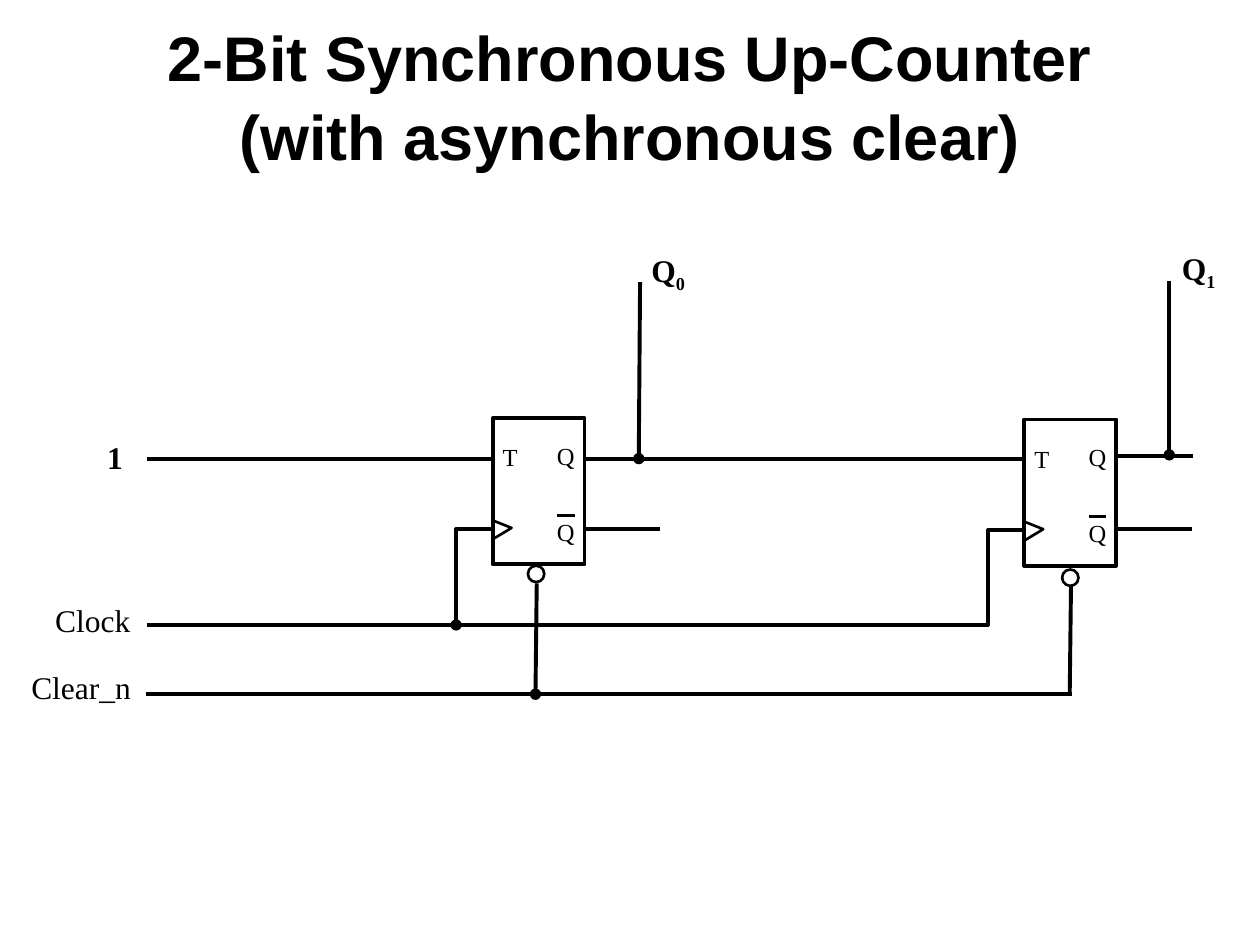
"""Draw a two-bit synchronous up-counter built from T flip-flops."""
from dataclasses import dataclass

from lxml import etree
from pptx import Presentation
from pptx.dml.color import RGBColor
from pptx.enum.shapes import MSO_CONNECTOR, MSO_SHAPE
from pptx.enum.text import MSO_ANCHOR, MSO_AUTO_SIZE, PP_ALIGN
from pptx.oxml.ns import qn
from pptx.shapes.autoshape import Shape
from pptx.shapes.shapetree import SlideShapes
from pptx.util import Inches, Pt

STRAIGHT = MSO_CONNECTOR.STRAIGHT
RECTANGLE, OVAL = MSO_SHAPE.RECTANGLE, MSO_SHAPE.OVAL
CENTER, TOP = PP_ALIGN.CENTER, MSO_ANCHOR.TOP
GROW = MSO_AUTO_SIZE.SHAPE_TO_FIT_TEXT
Point = tuple[float, float]


@dataclass(frozen=True)
class Theme:
    ink: RGBColor = RGBColor(0, 0, 0)
    paper: RGBColor = RGBColor(255, 255, 255)
    title_font: str = "Arial"
    label_font: str = "Times New Roman"
    title_size: float = 36
    signal_size: float = 18
    pin_size: float = 14
    wire: float = 2.25
    symbol: float = 1.5
    overbar: float = 1.38
    dot: float = 0.75


@dataclass(frozen=True)
class Wire:
    start: Point
    end: Point
    weight: float


@dataclass(frozen=True)
class Label:
    text: str
    left: float
    top: float
    width: float
    height: float
    size: float
    bold: bool = False
    subscript: str = ""
    inset: float = 0


@dataclass(frozen=True)
class FlipFlop:
    left: float
    top: float
    bubble: Point


THEME = Theme()
BLOCK_WIDTH, BLOCK_HEIGHT = 0.73, 1.16
DOT_SIZE, BUBBLE_SIZE = 0.08, 0.13

FLIP_FLOPS = (
    FlipFlop(3.91, 3.32, (4.19, 4.49)),
    FlipFlop(8.13, 3.33, (8.43, 4.52)),
)
WIRES = tuple(
    Wire(start, end, THEME.wire)
    for start, end in (
        ((1.17, 3.64), (3.95, 3.64)),
        ((4.65, 3.64), (8.14, 3.64)),
        ((4.64, 4.2), (5.24, 4.2)),
        ((8.86, 3.62), (9.47, 3.62)),
        ((8.86, 4.2), (9.46, 4.2)),
        ((1.17, 4.96), (7.85, 4.96)),
        ((1.16, 5.51), (8.51, 5.51)),
        ((4.26, 4.63), (4.25, 5.49)),
        ((8.5, 4.65), (8.49, 5.51)),
        ((5.08, 2.24), (5.07, 3.63)),
        ((9.28, 2.23), (9.28, 3.62)),
    )
)
JUNCTIONS = ((3.62, 4.96), (4.25, 5.51), (5.07, 3.64), (9.28, 3.61))
SIGNALS = (
    Label("1", 0.85, 3.48, 0.13, 0.3, THEME.signal_size, bold=True),
    Label("Clock", 0.34, 4.72, 0.8, 0.4, THEME.signal_size, inset=0.1),
    Label("Clear_n", 0.15, 5.25, 1, 0.4, THEME.signal_size, inset=0.1),
    Label("Q", 5.17, 1.99, 0.27, 0.3, THEME.signal_size, True, "0"),
    Label("Q", 9.38, 1.98, 0.27, 0.3, THEME.signal_size, True, "1"),
)


def draw_wire(shapes: SlideShapes, wire: Wire) -> None:
    ends = [Inches(value) for value in (*wire.start, *wire.end)]
    connector = shapes.add_connector(STRAIGHT, *ends)
    connector.line.color.rgb = THEME.ink
    connector.line.width = Pt(wire.weight)
    etree.SubElement(connector._element.spPr, qn("a:effectLst"))


def style_outline(shape: Shape, weight: float) -> None:
    shape.shadow.inherit = False
    shape.line.color.rgb = THEME.ink
    shape.line.width = Pt(weight)


def draw_solid(shapes: SlideShapes, kind: MSO_SHAPE, corner: Point, size: Point,
               fill: RGBColor, weight: float) -> None:
    solid = shapes.add_shape(kind, *(Inches(value) for value in (*corner, *size)))
    style_outline(solid, weight)
    solid.fill.solid()
    solid.fill.fore_color.rgb = fill


def draw_path(shapes: SlideShapes, points: list[Point], weight: float) -> None:
    start, *rest = [(Inches(x), Inches(y)) for x, y in points]
    builder = shapes.build_freeform(*start)
    builder.add_line_segments(rest, close=False)
    outline = builder.convert_to_shape()
    style_outline(outline, weight)
    outline.fill.background()


def draw_label(shapes: SlideShapes, label: Label) -> None:
    box = shapes.add_textbox(Inches(label.left), Inches(label.top),
                             Inches(label.width), Inches(label.height))
    frame = box.text_frame
    frame.word_wrap = False
    frame.auto_size = GROW
    frame.margin_left = frame.margin_right = Inches(label.inset)
    frame.margin_top = frame.margin_bottom = Inches(label.inset / 2)
    for text, baseline in ((label.text, 0), (label.subscript, -25000)):
        if text:
            run = frame.paragraphs[0].add_run()
            run.text = text
            run.font.name = THEME.label_font
            run.font.size = Pt(label.size)
            run.font.bold = label.bold
            run.font.color.rgb = THEME.ink
            if baseline:
                run._r.get_or_add_rPr().set("baseline", str(baseline))


def draw_flip_flop(shapes: SlideShapes, block: FlipFlop) -> None:
    left, top = block.left, block.top
    draw_solid(shapes, RECTANGLE, (left, top), (BLOCK_WIDTH, BLOCK_HEIGHT),
               THEME.paper, THEME.wire)
    for pin, dx, dy, width in (("T", 0.08, 0.19, 0.16), ("Q", 0.51, 0.18, 0.27),
                               ("Q", 0.51, 0.78, 0.27)):
        draw_label(shapes, Label(pin, left + dx, top + dy, width, 0.25, THEME.pin_size))
    draw_wire(shapes, Wire((left + 0.51, top + 0.77), (left + 0.65, top + 0.77),
                           THEME.overbar))
    draw_path(shapes, [(left, top + 0.96), (left + 0.15, top + 0.87),
                       (left, top + 0.81)], THEME.symbol)
    draw_path(shapes, [(left - 0.29, top + 1.64), (left - 0.29, top + 0.88),
                       (left + 0.01, top + 0.88)], THEME.wire)
    draw_solid(shapes, OVAL, block.bubble, (BUBBLE_SIZE, BUBBLE_SIZE),
               THEME.paper, THEME.symbol)


def draw_title(shapes: SlideShapes, lines: tuple[str, ...]) -> None:
    frame = shapes.add_textbox(0, Inches(0.05), Inches(10), Inches(1.43)).text_frame
    frame.word_wrap = True
    frame.vertical_anchor = TOP
    frame.margin_top = Inches(0.1)
    for index, line in enumerate(lines):
        paragraph = frame.add_paragraph() if index else frame.paragraphs[0]
        paragraph.alignment = CENTER
        paragraph.space_before = Pt(1.5 * index)
        run = paragraph.add_run()
        run.text = line
        run.font.name = THEME.title_font
        run.font.size = Pt(THEME.title_size)
        run.font.bold = True
        run.font.color.rgb = THEME.ink


def main() -> None:
    deck = Presentation()
    deck.slide_width, deck.slide_height = Inches(10), Inches(7.5)
    shapes = deck.slides.add_slide(deck.slide_layouts[6]).shapes
    draw_title(shapes, ("2-Bit Synchronous Up-Counter", "(with asynchronous clear)"))
    for wire in WIRES:
        draw_wire(shapes, wire)
    for block in FLIP_FLOPS:
        draw_flip_flop(shapes, block)
    for x, y in JUNCTIONS:
        draw_solid(shapes, OVAL, (x - DOT_SIZE / 2, y - DOT_SIZE / 2),
                   (DOT_SIZE, DOT_SIZE), THEME.ink, THEME.dot)
    for signal in SIGNALS:
        draw_label(shapes, signal)
    deck.save("out.pptx")


if __name__ == "__main__":
    main()
